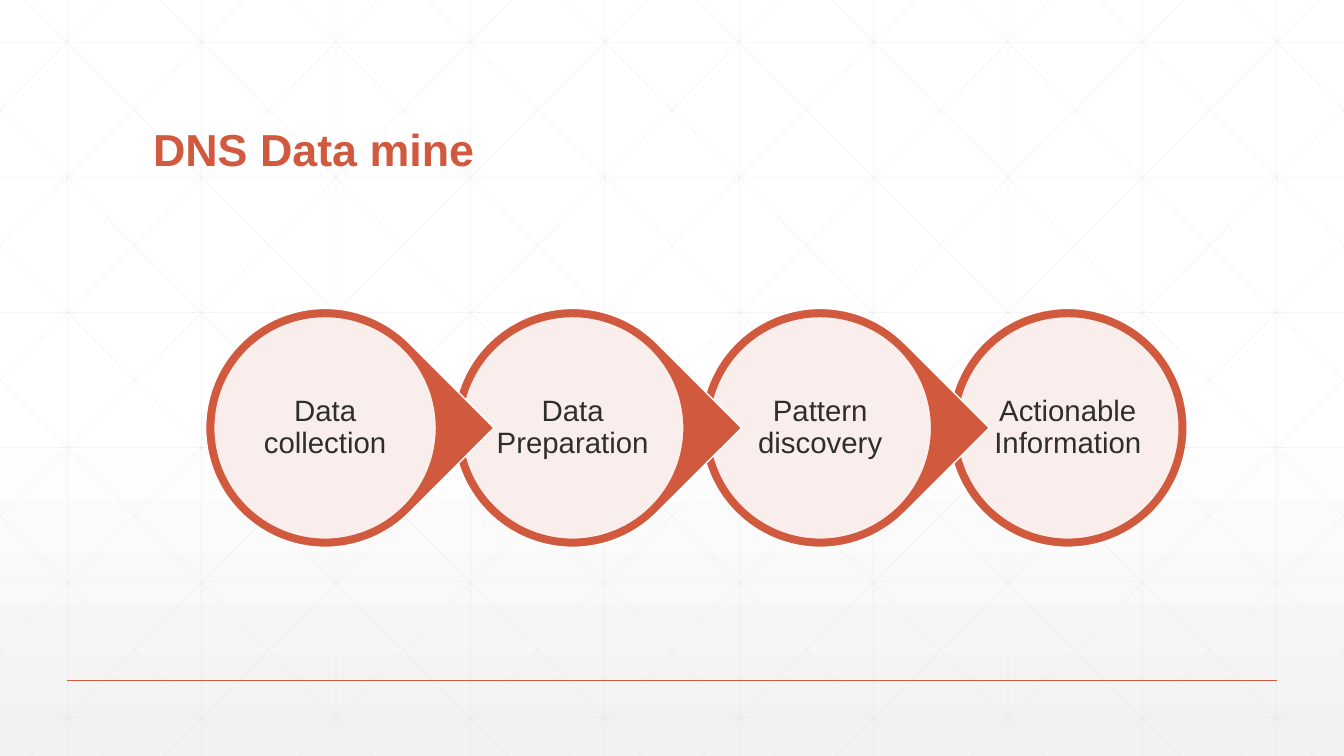
from dataclasses import dataclass

from lxml.etree import SubElement as Sub
from pptx import Presentation
from pptx.dml.color import RGBColor as Rgb
from pptx.enum.shapes import MSO_CONNECTOR as Link, MSO_SHAPE as Form
from pptx.enum.text import MSO_ANCHOR as Anchor, PP_ALIGN as Align
from pptx.oxml.ns import qn
from pptx.util import Inches, Pt

WIDE, HIGH = 13.333, 7.5
COL = WIDE / 10          # pitch of the background mesh
ROW = 1.34
STEPS = ["Data collection", "Data Preparation", "Pattern discovery", "Actionable Information"]


@dataclass(frozen=True)
class Theme:
    font: str = "Arial"
    main: str = "D15A3E"
    ink: str = "2D2E2D"
    mesh: str = "D9D9D9"
    white: str = "FFFFFF"
    shade: str = "F2F2F2"
    head: int = 32
    body: int = 21


THEME = Theme()


def put(item, values):
    for name, value in values.items():
        setattr(item, name, value)


def color(hue):
    return Rgb.from_string(hue)


def fade(shape, share):
    """Make the first colour of a shape opaque only to the given percentage."""
    hue = shape.element.spPr.find(".//" + qn("a:srgbClr"))
    Sub(hue, qn("a:alpha"), val=str(share * 1000))


def rule(shapes, start, end, hue, width):
    line = shapes.add_connector(Link.STRAIGHT, *map(Inches, (*start, *end)))
    line.line.color.rgb = color(hue)
    line.line.width = Pt(width)
    Sub(line.element.spPr, qn("a:effectLst"))
    return line


def disc(shapes, form, box, fill, edge):
    shape = shapes.add_shape(form, *map(Inches, box))
    shape.shadow.inherit = False
    shape.fill.solid()
    shape.fill.fore_color.rgb = color(fill)
    shape.line.color.rgb = color(edge)
    shape.line.width = Pt(1)
    return shape


def label(shapes, text, box, frame, para, font, hue):
    area = shapes.add_textbox(*map(Inches, box)).text_frame
    put(area, {"word_wrap": True, **frame})
    line = area.paragraphs[0]
    put(line, {"line_spacing": 0.9, **para})
    run = line.add_run()
    run.text = text
    put(run.font, {"name": THEME.font, **font})
    run.font.color.rgb = color(hue)


def slant(left):
    """Ends of a falling diagonal from x = left on the top edge, cut at the slide's sides."""
    slope = HIGH / 7.455
    ends = max(left, 0), min(left + HIGH / slope, WIDE)
    return [(x, (x - left) * slope) for x in ends]


def backdrop(slide):
    fill = slide.background.fill
    fill.gradient()
    fill.gradient_angle = 270
    hues = (0.53, THEME.white), (1, THEME.shade)
    for stop, (place, hue) in zip(fill.gradient_stops, hues):
        stop.position = place
        stop.color.rgb = color(hue)


def mesh(slide):
    lines = [[(x, 0), (x, HIGH)] for x in (COL * (i + 0.5) for i in range(10))]
    lines += [[(0, y), (WIDE, y)] for y in (0.42 + ROW * i for i in range(6))]
    falls = [slant(0.25 + COL * i) for i in range(-5, 10)]
    lines += falls
    lines += [[(WIDE - x, y) for x, y in ends] for ends in falls]
    group = slide.shapes.add_group_shape()
    for ends in lines:
        fade(rule(group.shapes, *ends, THEME.mesh, 0.5), 25)


def chain(slide):
    """Discs laid from right to left, so each tip lies over the next disc."""
    left, top, size, pitch = 2.04, 3.06, 2.37, 2.456
    group = slide.shapes.add_group_shape().shapes
    last = len(STEPS) - 1

    def inset(x, gap):
        return x + gap, top + gap, size - 2 * gap, size - 2 * gap

    margins = {f"margin_{side}": Inches(0.03) for side in ("left", "right", "top", "bottom")}
    for i, step in reversed(list(enumerate(STEPS))):
        x = left + pitch * i
        form = Form.OVAL if i == last else Form.TEAR
        outer = disc(group, form, inset(x, 0), THEME.main, THEME.white)
        outer.rotation = 0 if i == last else 45
        inner = disc(group, Form.OVAL, inset(x, 0.08), THEME.white, THEME.main)
        fade(inner, 90)
        label(group, step, inset(x, 0.395),
              {"vertical_anchor": Anchor.MIDDLE, **margins},
              {"alignment": Align.CENTER}, {"size": Pt(THEME.body)}, THEME.ink)


def main():
    deck = Presentation()
    put(deck, {"slide_width": Inches(WIDE), "slide_height": Inches(HIGH)})
    slide = deck.slides.add_slide(deck.slide_layouts[6])
    backdrop(slide)
    mesh(slide)
    base = HIGH * 0.9
    rule(slide.shapes, (COL / 2, base), (WIDE - COL / 2, base), THEME.main, 1)
    label(slide.shapes, "DNS Data mine", (1.42, 0.55, 10.5, 1.25),
          {"vertical_anchor": Anchor.BOTTOM}, {},
          {"size": Pt(THEME.head), "bold": True}, THEME.main)
    chain(slide)
    deck.save("out.pptx")


if __name__ == "__main__":
    main()
